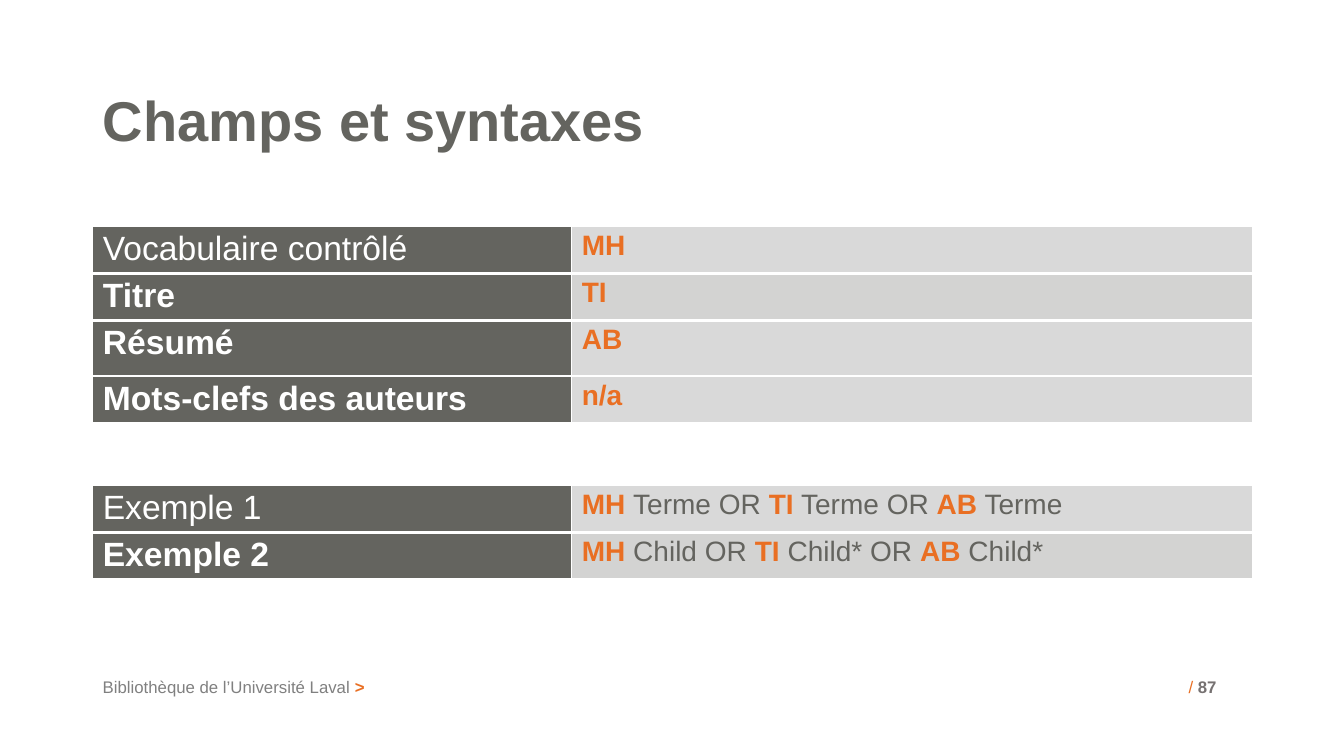
import pptx
import pptx.util
import pptx.dml.color
import pptx.enum.text
import pptx.oxml.ns
from lxml import etree
from dataclasses import dataclass

Inches, Pt = pptx.util.Inches, pptx.util.Pt
RGB = pptx.dml.color.RGBColor.from_string


@dataclass
class Theme:
    font: str = "Arial"
    grey: str = "64645F"
    orange: str = "E96F23"
    white: str = "FFFFFF"
    light: str = "D9D9D9"
    band: str = "D3D3D2"
    footer: str = "808080"
    number: str = "767171"
    title_size: int = 40
    label_size: int = 24
    code_size: int = 20
    footer_size: int = 12


class SlideBuilder:
    def __init__(self, prs, theme):
        self.theme = theme
        self.s = prs.slides.add_slide(prs.slide_layouts[5])

    def add_runs(self, tf, runs, size):
        """Fill the first paragraph with (text, colour, bold) runs."""
        p = tf.paragraphs[0]
        p.font.name, p.font.size = self.theme.font, Pt(size)
        for text, color, bold in runs:
            r = p.add_run()
            r.text = text
            r.font.bold = bold
            r.font.color.rgb = RGB(color)
        return p

    def title(self, text, left, top, width, height):
        sp = self.s.shapes.title
        sp.left, sp.top, sp.width, sp.height = map(Inches, (left, top, width, height))
        tf = sp.text_frame
        tf.vertical_anchor = pptx.enum.text.MSO_ANCHOR.TOP
        p = self.add_runs(tf, [(text, self.theme.grey, True)], self.theme.title_size)
        p.alignment = pptx.enum.text.PP_ALIGN.LEFT
        p.line_spacing = 0.9

    def text(self, runs, left, top, width, height):
        sp = self.s.shapes.add_textbox(*map(Inches, (left, top, width, height)))
        sp.text_frame.word_wrap = True
        self.add_runs(sp.text_frame, runs, self.theme.footer_size)

    def style_cell(self, cell, fill):
        cell.margin_top = cell.margin_bottom = Inches(0.04)
        tc_pr = cell._tc.get_or_add_tcPr()
        qn = pptx.oxml.ns.qn
        for side, width in (("L", 1), ("R", 1), ("T", 2.25), ("B", 2.25)):
            ln = etree.SubElement(tc_pr, qn(f"a:ln{side}"), w=str(Pt(width)))
            paint = etree.SubElement(ln, qn("a:solidFill"))
            etree.SubElement(paint, qn("a:srgbClr"), val=self.theme.white)
        cell.fill.solid()
        cell.fill.fore_color.rgb = RGB(fill)

    def table(self, rows, left, top, widths, heights):
        """Each row is a label and its parts: codes alternate with plain terms."""
        t = self.theme
        frame = self.s.shapes.add_table(
            len(rows), len(widths), *map(Inches, (left, top, sum(widths), sum(heights))))
        table = frame.table
        table.horz_banding = False
        for column, width in zip(table.columns, widths):
            column.width = Inches(width)
        for i, ((label, *parts), height) in enumerate(zip(rows, heights)):
            table.rows[i].height = Inches(height)
            label_cell, code_cell = table.cell(i, 0), table.cell(i, 1)
            self.style_cell(label_cell, t.grey)
            self.style_cell(code_cell, t.band if i == 1 else t.light)
            self.add_runs(label_cell.text_frame, [(label, t.white, i > 0)], t.label_size)
            runs = [(part, t.grey if k % 2 else t.orange, k % 2 == 0)
                    for k, part in enumerate(parts)]
            self.add_runs(code_cell.text_frame, runs, t.code_size)


def main():
    prs = pptx.Presentation()
    prs.slide_width, prs.slide_height = Inches(13.33), Inches(7.5)
    theme = Theme()
    slide = SlideBuilder(prs, theme)
    left, widths, row = 0.92, (4.75, 6.75), 0.47

    # Title
    slide.title("Champs et syntaxes", left, 0.87, sum(widths), 1.18)

    # Search fields
    slide.table([
        ("Vocabulaire contrôlé", "MH"),
        ("Titre", "TI"),
        ("Résumé", "AB"),
        ("Mots-clefs des auteurs", "n/a"),
    ], left, 2.24, widths, (row, row, 0.55, row))

    # Query examples
    slide.table([
        ("Exemple 1", "MH ", "Terme OR ", "TI", " Terme OR ", "AB", " Terme"),
        ("Exemple 2", "MH ", "Child OR ", "TI ", "Child* OR ", "AB ", "Child*"),
    ], left, 4.81, widths, (row, row))

    # Footer and page number
    slide.text([("Bibliothèque de l’Université Laval ", theme.footer, False),
                (">", theme.orange, True)], left, 6.66, 10.62, 0.4)
    slide.text([("/ ", theme.orange, False), ("87", theme.number, True)],
               11.69, 6.66, 0.72, 0.4)

    prs.save("out.pptx")


if __name__ == "__main__":
    main()
